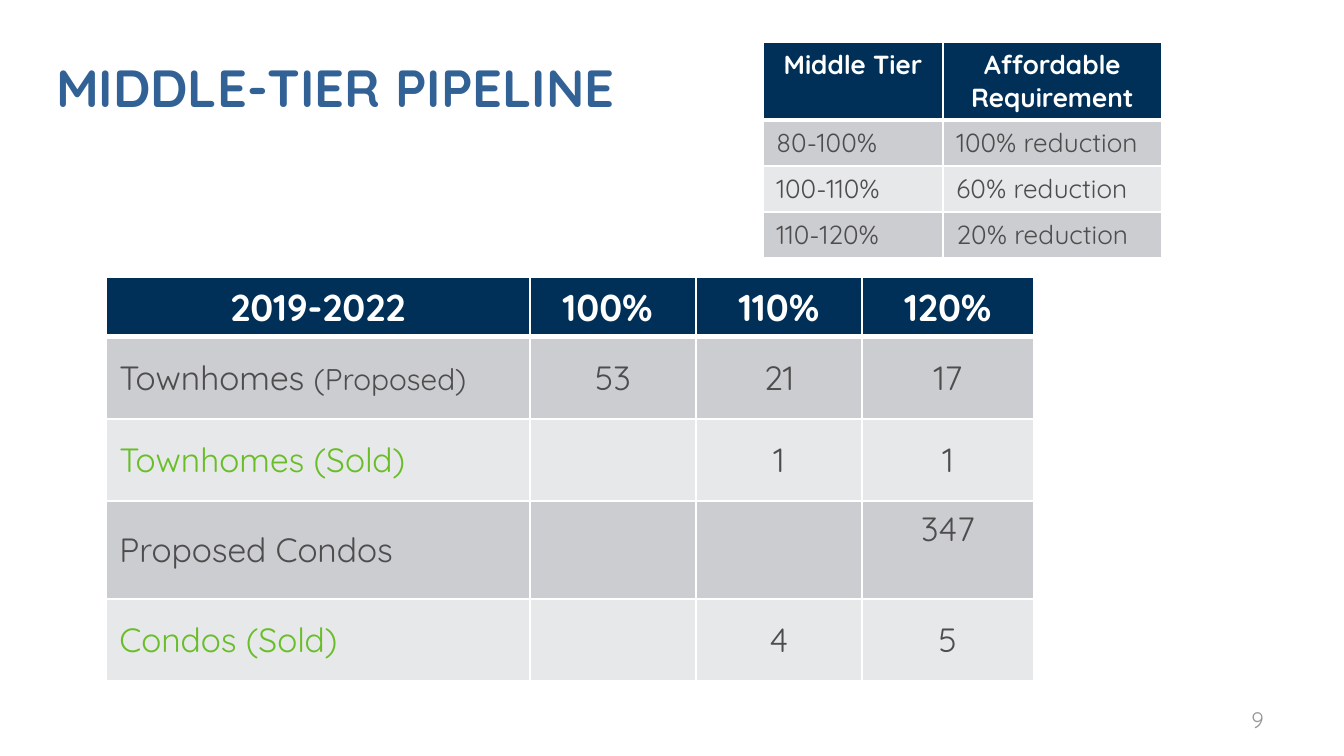
from lxml import etree
from pptx import Presentation
from pptx.dml.color import RGBColor
from pptx.enum.text import MSO_ANCHOR, PP_ALIGN
from pptx.oxml.ns import qn
from pptx.util import Emu, Pt

PX = 914400 / 134.4
FONT = "Quicksand"
NAVY = RGBColor(0x00, 0x30, 0x57)
BLUE = RGBColor(0x32, 0x62, 0x95)
GREEN = RGBColor(0x69, 0xBE, 0x28)
DARK = RGBColor(0x4D, 0x4D, 0x4D)
GREY = RGBColor(0x97, 0x97, 0x97)
WHITE = RGBColor(0xFF, 0xFF, 0xFF)
BANDS = [RGBColor(0xE7, 0xE8, 0xEA), RGBColor(0xCC, 0xCD, 0xD1)]
LEFT, CENTER, RIGHT = PP_ALIGN.LEFT, PP_ALIGN.CENTER, PP_ALIGN.RIGHT
TOP, MIDDLE = MSO_ANCHOR.TOP, MSO_ANCHOR.MIDDLE


def px(*lengths):
    return [Emu(round(length * PX)) for length in lengths]


def write(frame, text, size=18, color=DARK, bold=False, align=LEFT, note="", note_size=16):
    """Fill the first paragraph, with an optional smaller note after the text."""
    para = frame.paragraphs[0]
    para.alignment = align
    for words, points in ((text, size), (note, note_size)):
        if words:
            span = para.add_run()
            span.text = words
            span.font.name = FONT
            span.font.size = Pt(points)
            span.font.bold = bold
            span.font.color.rgb = color


deck = Presentation()
deck.slide_width, deck.slide_height = px(1344, 756)
page = deck.slides.add_slide(deck.slide_layouts[6])

pipeline = {
    "place": (106, 277), "columns": [424, 166, 166, 172], "rows": [60, 82, 82, 98, 82],
    "head_size": 20, "size": 18, "anchor": MIDDLE, "value_align": CENTER,
    "cells": [
        ["2019-2022", "100% ", "110%", "120%"],
        ["Townhomes (Proposed)", "53", "21", "17"],
        ["Townhomes (Sold)", "", "1", "1"],
        ["Proposed Condos", "", "", "347"],
        ["Condos (Sold)", "", "4", "5"],
    ],
}
reductions = {
    "place": (763, 42), "columns": [180, 219], "rows": [78, 46, 46, 46],
    "head_size": 14, "size": 14, "anchor": TOP, "value_align": LEFT,
    "cells": [
        ["Middle Tier", "Affordable Requirement"],
        ["80-100%", "100% reduction"],
        ["100-110%", "60% reduction"],
        ["110-120%", "20% reduction"],
    ],
}
text_boxes = [
    ((43, 42, 1234, 89), "MIDDLE-TIER PIPELINE", dict(size=28, color=BLUE, bold=True)),
    ((964, 700, 313, 40), "9", dict(size=12, color=GREY, align=RIGHT)),
]

for place, text, style in text_boxes:
    box = page.shapes.add_textbox(*px(*place))
    box.text_frame.word_wrap = True
    box.text_frame.vertical_anchor = MIDDLE
    write(box.text_frame, text, **style)

for data in (pipeline, reductions):
    columns, rows = data["columns"], data["rows"]
    size = (sum(columns), sum(rows))
    table = page.shapes.add_table(len(rows), len(columns), *px(*data["place"], *size)).table
    for column, width in zip(table.columns, px(*columns)):
        column.width = width
    for row, height in zip(table.rows, px(*rows)):
        row.height = height

    for r, texts in enumerate(data["cells"]):
        for c, text in enumerate(texts):
            cell = table.cell(r, c)
            properties = cell._tc.get_or_add_tcPr()
            for side in "LRTB":
                thick = (r, side) in ((0, "B"), (1, "T"))
                line = etree.SubElement(properties, qn(f"a:ln{side}"), w=str(Pt(3 if thick else 1)))
                fill = etree.SubElement(line, qn("a:solidFill"))
                etree.SubElement(fill, qn("a:srgbClr"), val=str(WHITE))
            cell.fill.solid()
            cell.fill.fore_color.rgb = NAVY if r == 0 else BANDS[r % 2]
            cell.vertical_anchor = TOP if r == 0 else data["anchor"]

            if r == 0:
                write(cell.text_frame, text, size=data["head_size"], color=WHITE,
                      bold=True, align=CENTER)
            else:
                name, mark, _ = text.partition("(Proposed)")
                write(cell.text_frame, name, size=data["size"], note=mark,
                      color=GREEN if "(Sold)" in text else DARK,
                      align=data["value_align"] if c else LEFT)
            if text == "347":
                cell.margin_bottom = px(49)[0]

deck.save("out.pptx")
